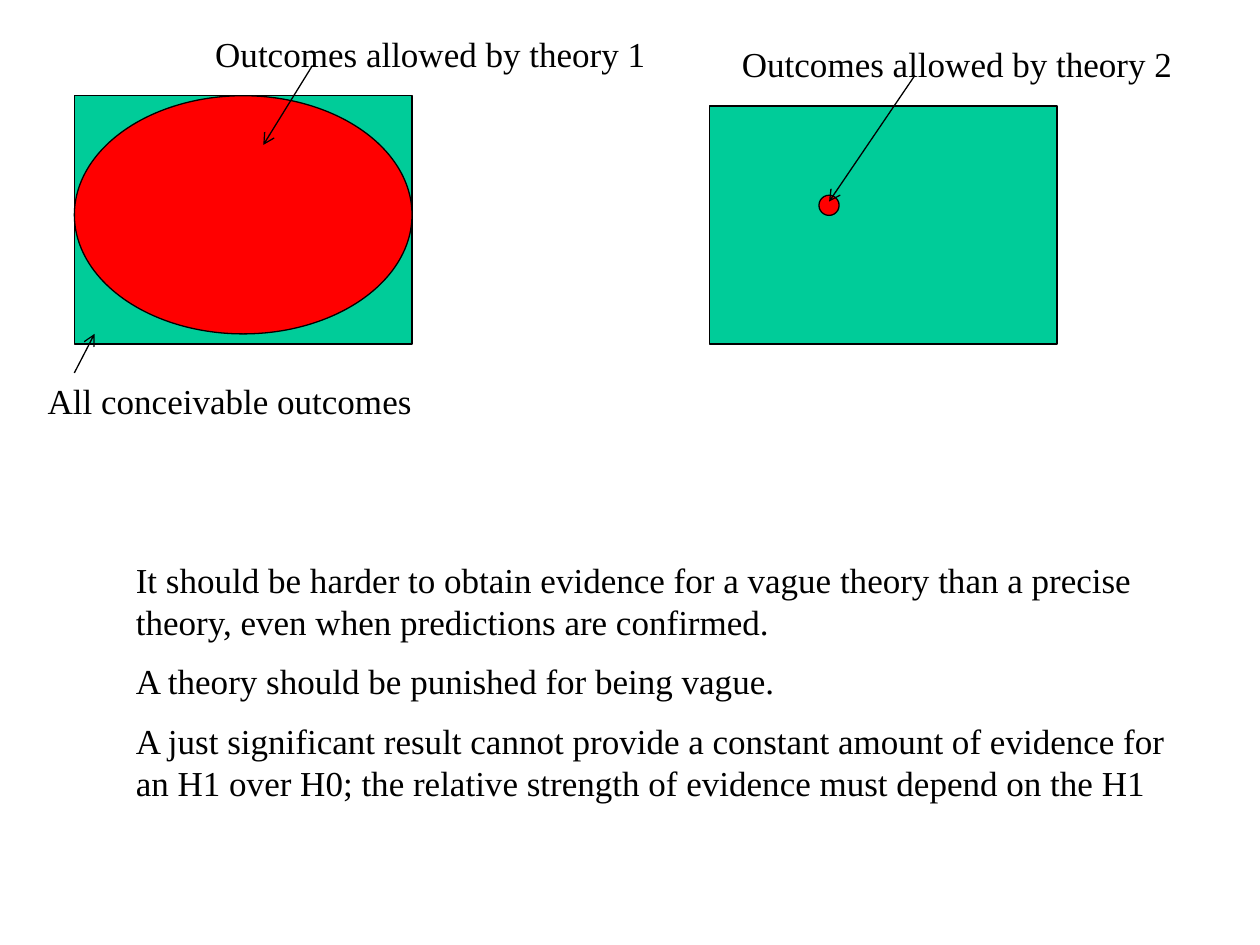
from lxml import etree
from pptx import Presentation
from pptx.dml.color import RGBColor
from pptx.enum.shapes import MSO_CONNECTOR, MSO_SHAPE
from pptx.oxml.ns import qn
from pptx.util import Inches, Pt

RECTANGLE, ELLIPSE = MSO_SHAPE.RECTANGLE, MSO_SHAPE.OVAL
STRAIGHT = MSO_CONNECTOR.STRAIGHT
FONT = "Times New Roman"
BLACK, GREEN, RED = "000000", "00CC99", "FF0000"

# Boxes are (left, top, width, height), arrows (from, to), all in inches.
DIAGRAMS = [
    {
        "conceivable": (0.59, 0.76, 2.68, 1.97),
        "allowed": (0.59, 0.76, 2.68, 1.89),
        "labels": [
            ("All conceivable outcomes", (0.28, 2.96, 4.25, 0.44)),
            ("Outcomes allowed by theory 1", (1.61, 0.21, 3.7, 0.44)),
        ],
        "arrows": [((0.59, 2.96), (0.75, 2.65)), ((2.48, 0.52), (2.09, 1.15))],
    },
    {
        "conceivable": (5.63, 0.84, 2.76, 1.89),
        "allowed": (6.5, 1.55, 0.16, 0.16),
        "labels": [("Outcomes allowed by theory 2", (5.79, 0.29, 3.7, 0.44))],
        "arrows": [((7.26, 0.6), (6.58, 1.6))],
    },
]
CONCLUSIONS = [
    "It should be harder to obtain evidence for a vague theory than a precise "
    "theory, even when predictions are confirmed.",
    "A theory should be punished for being vague.",
    "A just significant result cannot provide a constant amount of evidence for "
    "an H1 over H0; the relative strength of evidence must depend on the H1",
]
CONCLUSIONS_BOX = (0.98, 4.38, 8.66, 2.12)


def color(hex_string):
    return RGBColor.from_string(hex_string)


def to_inches(lengths):
    return [Inches(length) for length in lengths]


def set_outline(shape):
    shape.line.color.rgb = color(BLACK)
    shape.line.width = Pt(0.75)


def add_region(shapes, kind, box, fill):
    shape = shapes.add_shape(kind, *to_inches(box))
    shape.shadow.inherit = False
    shape.fill.solid()
    shape.fill.fore_color.rgb = color(fill)
    set_outline(shape)


def add_text(shapes, paragraphs, box, size=20, font=FONT, fill=BLACK, gap=10):
    """Add a text box with a gap in points between its paragraphs."""
    frame = shapes.add_textbox(*to_inches(box)).text_frame
    frame.word_wrap = True
    for index, text in enumerate(paragraphs):
        paragraph = frame.add_paragraph() if index else frame.paragraphs[0]
        if index:
            paragraph.space_before = Pt(gap)
        run = paragraph.add_run()
        run.text = text
        run.font.size = Pt(size)
        run.font.name = font
        run.font.color.rgb = color(fill)


def add_arrow(shapes, start, end):
    arrow = shapes.add_connector(STRAIGHT, *to_inches(start + end))
    set_outline(arrow)
    etree.SubElement(arrow.line._get_or_add_ln(), qn("a:tailEnd"), type="arrow")
    etree.SubElement(arrow._element.spPr, qn("a:effectLst"))


def main():
    presentation = Presentation()
    presentation.slide_width, presentation.slide_height = Inches(10), Inches(7.5)
    slide = presentation.slides.add_slide(presentation.slide_layouts[6])

    for diagram in DIAGRAMS:
        shapes = slide.shapes.add_group_shape().shapes
        add_region(shapes, RECTANGLE, diagram["conceivable"], GREEN)
        add_region(shapes, ELLIPSE, diagram["allowed"], RED)
        for text, box in diagram["labels"]:
            add_text(shapes, [text], box)
        for start, end in diagram["arrows"]:
            add_arrow(shapes, start, end)

    add_text(slide.shapes, CONCLUSIONS, CONCLUSIONS_BOX)
    presentation.save("out.pptx")


if __name__ == "__main__":
    main()
